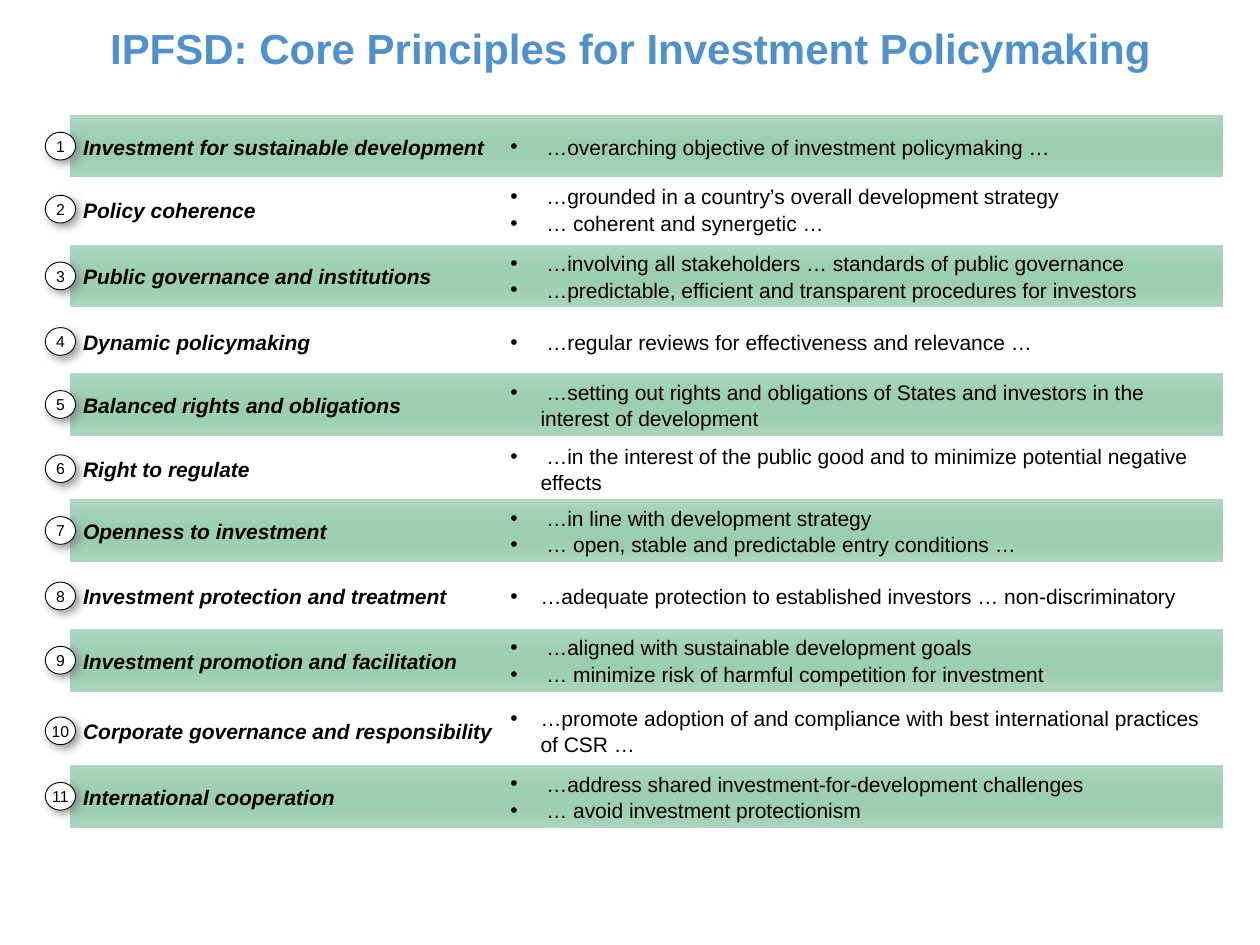
from lxml.etree import SubElement
from pptx import Presentation
from pptx.dml.color import RGBColor
from pptx.enum.shapes import MSO_SHAPE as Shape
from pptx.enum.text import MSO_ANCHOR as Anchor, PP_ALIGN as Align
from pptx.oxml.ns import qn
from pptx.util import Emu, Inches, Pt

TITLE = "IPFSD: Core Principles for Investment Policymaking"
PRINCIPLES = [
    (1.16, "Investment for sustainable development",
     [" …overarching objective of investment policymaking …"]),
    (1.66, "Policy coherence",
     [" …grounded in a country’s overall development strategy",
      " … coherent and synergetic …"]),
    (2.19, "Public governance and institutions",
     [" …involving all stakeholders … standards of public governance",
      " …predictable, efficient and transparent procedures for investors"]),
    (2.71, "Dynamic policymaking",
     [" …regular reviews for effectiveness and relevance …"]),
    (3.21, "Balanced rights and obligations",
     [" …setting out rights and obligations of States and investors in the interest of development"]),
    (3.72, "Right to regulate",
     [" …in the interest of the public good and to minimize potential negative effects"]),
    (4.21, "Openness to investment",
     [" …in line with development strategy",
      " … open, stable and predictable entry conditions …"]),
    (4.73, "Investment protection and treatment",
     ["…adequate protection to established investors … non-discriminatory"]),
    (5.24, "Investment promotion and facilitation",
     [" …aligned with sustainable development goals",
      " … minimize risk of harmful competition for investment"]),
    (5.80, "Corporate governance and responsibility",
     ["…promote adoption of and compliance with best international practices of CSR …"]),
    (6.32, "International cooperation",
     [" …address shared investment-for-development challenges",
      " … avoid investment protectionism"]),
]

BLACK = RGBColor(0x00, 0x00, 0x00)
WHITE = RGBColor(0xFF, 0xFF, 0xFF)
BLUE = RGBColor(0x4F, 0x91, 0xCD)
GREEN = RGBColor(0x33, 0x99, 0x66)
PALE_GREEN = RGBColor(0xAB, 0xD5, 0xC0)

BAR = (0.56, 9.14, 0.49)
BADGE = (0.36, 0.24, 0.22)
LABEL = (0.66, 3.3, 0.2)
DETAIL = (4.05, 5.63, 0.4)
LINE_SPACING = 1.05


def box_at(column, middle):
    left, width, height = column
    return [Inches(value) for value in (left, middle - height / 2, width, height)]


def add_bullet(paragraph):
    properties = paragraph._p.get_or_add_pPr()
    properties.set("marL", str(Inches(0.24)))
    properties.set("indent", str(-Inches(0.24)))
    SubElement(properties, qn("a:buFont"), typeface="Arial")
    SubElement(properties, qn("a:buChar"), char="•")
    tabs = SubElement(properties, qn("a:tabLst"))
    SubElement(tabs, qn("a:tab"), pos=str(Inches(0.14)), algn="l")


def write(shape, lines, size=12, color=BLACK, bold=False, italic=False, align=Align.LEFT,
          bullet=False, wrap=True, margin=0, spacing=LINE_SPACING):
    frame = shape.text_frame
    frame.word_wrap = wrap
    frame.vertical_anchor = Anchor.MIDDLE
    frame.margin_left = frame.margin_right = Emu(0)
    frame.margin_top = frame.margin_bottom = Inches(margin)
    for index, line in enumerate(lines):
        paragraph = frame.paragraphs[0] if index == 0 else frame.add_paragraph()
        paragraph.alignment = align
        paragraph.line_spacing = spacing
        if bullet:
            add_bullet(paragraph)
        run = paragraph.add_run()
        run.text = line
        run.font.name, run.font.size = "Arial", Pt(size)
        run.font.bold, run.font.italic = bold, italic
        run.font.color.rgb = color


def add_bar(shapes, middle):
    bar = shapes.add_shape(Shape.RECTANGLE, *box_at(BAR, middle))
    bar.shadow.inherit = False
    bar.line.fill.background()
    bar.fill.gradient()
    bar.fill.gradient_angle = 270
    for stop, color, position in zip(bar.fill.gradient_stops, (GREEN, PALE_GREEN), (0, 1)):
        stop.color.rgb = color
        stop.position = position
    start = bar._element.xpath(".//a:gsLst//a:srgbClr")[0]
    SubElement(start, qn("a:alpha"), val="38000")


def add_badge(shapes, middle, number):
    badge = shapes.add_shape(Shape.OVAL, *box_at(BADGE, middle))
    badge.fill.solid()
    badge.fill.fore_color.rgb = WHITE
    badge.line.color.rgb = BLACK
    badge.line.width = Pt(0.5)
    badge.shadow.inherit = False
    effects = badge._element.spPr.find(qn("a:effectLst"))
    shadow = SubElement(effects, qn("a:outerShdw"), blurRad=str(Pt(5)), dist=str(Pt(3)),
                        dir="2700000", algn="ctr", rotWithShape="0")
    color = SubElement(shadow, qn("a:srgbClr"), val="808080")
    SubElement(color, qn("a:alpha"), val="75000")
    write(badge, [str(number)], size=9, align=Align.CENTER, wrap=False, margin=0.04, spacing=1)


def add_principle(slide, number, middle, label, details):
    shapes = slide.shapes.add_group_shape().shapes
    if number % 2:
        add_bar(shapes, middle)
    write(shapes.add_textbox(*box_at(DETAIL, middle)), details, bullet=True)
    write(shapes.add_textbox(*box_at(LABEL, middle)), [label], bold=True, italic=True)
    add_badge(shapes, middle, number)


def main():
    """Build the slide of core principles for investment policymaking."""
    presentation = Presentation()
    presentation.slide_width, presentation.slide_height = Inches(10), Inches(7.5)
    slide = presentation.slides.add_slide(presentation.slide_layouts[5])
    title = slide.shapes.title
    title.left, title.top, title.width, title.height = box_at((0.01, 9.99, 0.55), 0.38)
    write(title, [TITLE], size=24, color=BLUE, bold=True, align=Align.CENTER, margin=0.05, spacing=1)
    for number, (middle, label, details) in enumerate(PRINCIPLES, start=1):
        add_principle(slide, number, middle, label, details)
    presentation.save("out.pptx")


if __name__ == "__main__":
    main()
